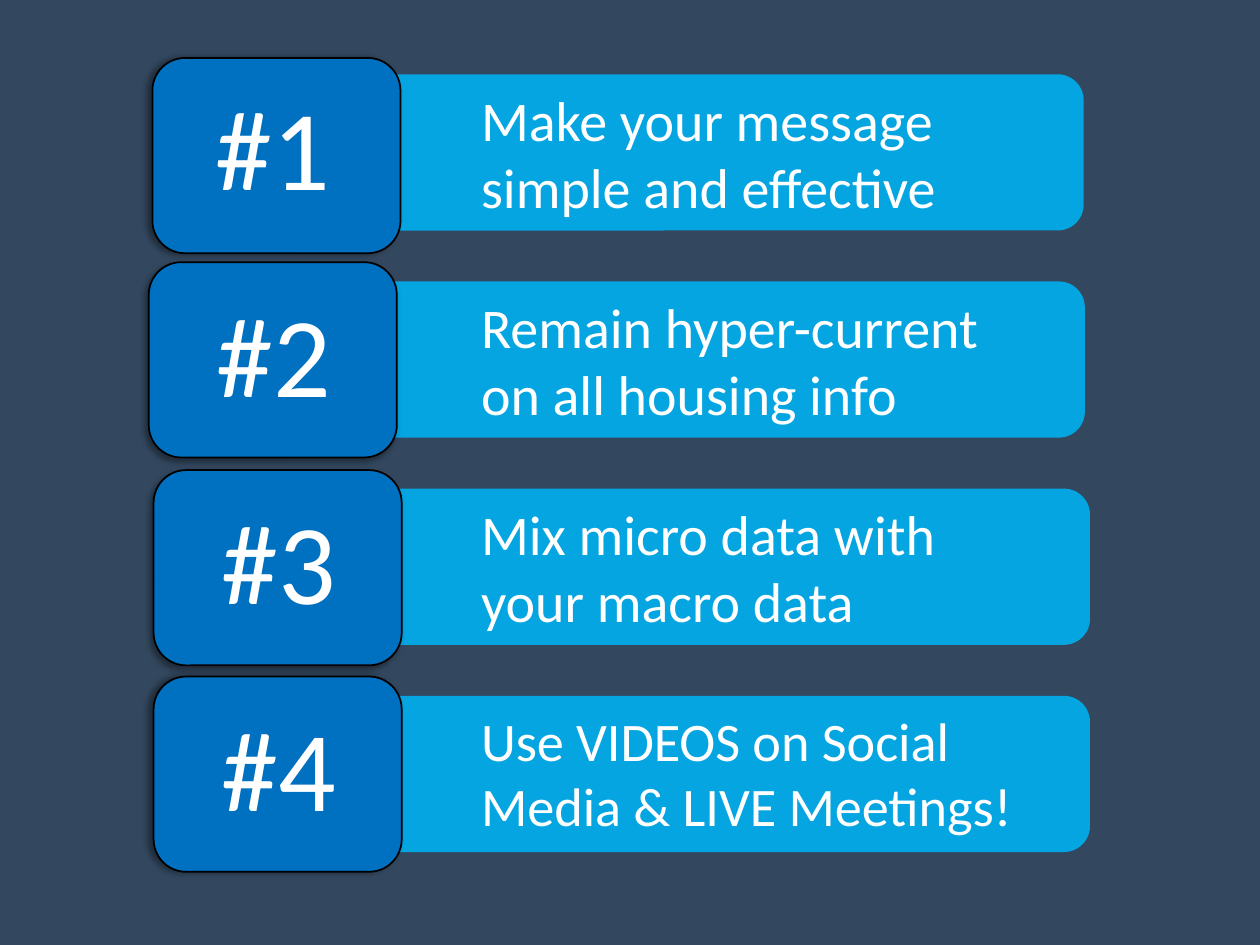
"""Build a slide with four numbered communication tips."""
from lxml import etree
from pptx import Presentation
from pptx.dml.color import RGBColor
from pptx.enum.shapes import MSO_SHAPE
from pptx.enum.text import MSO_ANCHOR, PP_ALIGN
from pptx.oxml import parse_xml
from pptx.oxml.ns import qn
from pptx.util import Pt

RECTANGLE = MSO_SHAPE.RECTANGLE
ROUNDED = MSO_SHAPE.ROUNDED_RECTANGLE
ROUND_TOP = MSO_SHAPE.ROUND_2_SAME_RECTANGLE
TOP, MIDDLE = MSO_ANCHOR.TOP, MSO_ANCHOR.MIDDLE
LEFT, CENTER = PP_ALIGN.LEFT, PP_ALIGN.CENTER
DRAWING = "http://schemas.openxmlformats.org/drawingml/2006/main"
ROW_PITCH = 118.4


def add_block(shapes, kind, left, top, width, height, color):
    shape = shapes.add_shape(kind, Pt(left), Pt(top), Pt(width), Pt(height))
    shape.shadow.inherit = False
    shape.fill.solid()
    shape.fill.fore_color.rgb = RGBColor.from_string(color)
    shape.line.fill.background()
    return shape


def add_text(shapes, lines, left, top, width, height, *, size, align=LEFT,
             anchor=TOP, margins=(7.2, 3.6), spacing=None):
    box = shapes.add_textbox(Pt(left), Pt(top), Pt(width), Pt(height))
    frame = box.text_frame
    frame.word_wrap = True
    frame.vertical_anchor = anchor
    frame.margin_left = frame.margin_right = Pt(margins[0])
    frame.margin_top = frame.margin_bottom = Pt(margins[1])
    frame.text = lines
    for paragraph in frame.paragraphs:
        paragraph.alignment = align
        paragraph.line_spacing = spacing
        paragraph.font.size = Pt(size)
        paragraph.font.name = "Calibri"
        paragraph.font.color.rgb = RGBColor.from_string("FFFFFF")


presentation = Presentation()
presentation.slide_width, presentation.slide_height = Pt(720), Pt(540)
slide = presentation.slides.add_slide(presentation.slide_layouts[6])
add_block(slide.shapes, RECTANGLE, 0, 0, 720, 540, "33485F")

tips = [
    ("Make your message\nsimple and effective", 32, 334, 373.7, 87.1, 33.1, 97.9, 180),
    ("Remain hyper-current on all housing info", 32, 337.7, 374.4, 85, 149.8, 98.6, 135),
    ("Mix micro data with your macro data", 32, 337.7, 377.3, 87.8, 268.6, 101.5, 135),
    ("Use VIDEOS on Social Media & LIVE Meetings!", 31, 351.4, 377.3, 87.8, 386.6, 101.5, 180),
]
for index, tip in enumerate(tips):
    (message, size, message_width, bar_left, badge_left, badge_top,
     number_left, shadow_angle) = tip
    offset = index * ROW_PITCH
    shapes = slide.shapes.add_group_shape().shapes

    bar = add_block(shapes, ROUND_TOP, bar_left, offset - 113.8, 89.3, 401.8, "00B0F0")
    bar.rotation = 90
    bar_color = bar.fill._xPr.find(qn("a:solidFill"))[0]
    etree.SubElement(bar_color, qn("a:alpha"), val="90000")

    badge = add_block(shapes, ROUNDED, badge_left, badge_top, 141.8, 111.6, "0070C0")
    badge.line.color.rgb = RGBColor.from_string("000000")
    badge.line.width = Pt(1)
    effects = badge.element.spPr.find(qn("a:effectLst"))
    effects.append(parse_xml(
        f'<a:outerShdw xmlns:a="{DRAWING}" blurRad="{Pt(4)}" dist="{Pt(3)}" '
        f'dir="{shadow_angle * 60000}" algn="ctr" rotWithShape="0">'
        '<a:srgbClr val="000000"><a:alpha val="40000"/></a:srgbClr></a:outerShdw>'))

    add_text(shapes, f"#{index + 1}", number_left, offset + 37.3, 115.9, 100.8, size=65,
             align=CENTER, anchor=MIDDLE, margins=(19.4, 10.1), spacing=0.9)
    add_text(shapes, message, 267.8, offset + 45.2, message_width, 85, size=size)

presentation.save("out.pptx")
